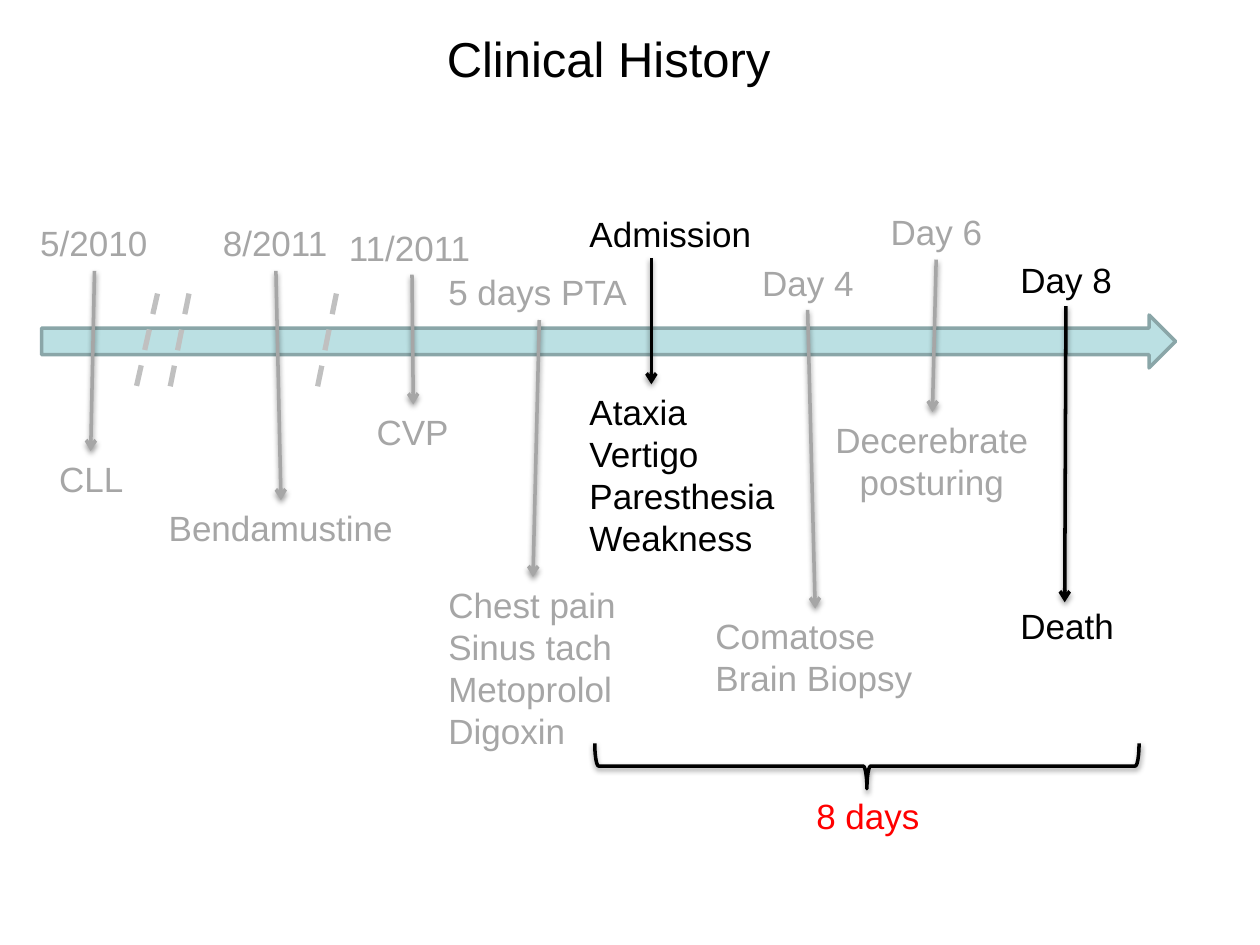
from lxml.etree import SubElement
from pptx import Presentation
from pptx.dml.color import RGBColor
from pptx.enum.dml import MSO_LINE
from pptx.enum.shapes import MSO_CONNECTOR, MSO_SHAPE
from pptx.enum.text import MSO_ANCHOR, MSO_AUTO_SIZE, PP_ALIGN
from pptx.oxml.ns import qn
from pptx.util import Emu, Pt

PX = 9144
FONT = "Arial"
BLACK = RGBColor(0x00, 0x00, 0x00)
GRAY = RGBColor(0xA6, 0xA6, 0xA6)
SILVER = RGBColor(0xC0, 0xC0, 0xC0)
RED = RGBColor(0xFF, 0x00, 0x00)
AQUA = RGBColor(0xBB, 0xE0, 0xE3)
TEAL = RGBColor(0x8A, 0xA6, 0xA8)

LINE_HEIGHT = 33
BOX_PADDING = 10

STAGES = [
    ("5/2010", (22, 171, 105), (75, 215, 72, 358),
     ["CLL"], (37, 358, 71), GRAY),
    ("5 days PTA", (346, 210, 164), (428, 254, 423, 458),
     ["Chest pain", "Sinus tach", "Metoprolol", "Digoxin"], (346, 458, 153), GRAY),
    ("Admission", (458, 164, 151), (517, 205, 517, 305),
     ["Ataxia", "Vertigo", "Paresthesia", "Weakness"], (458, 305, 168), BLACK),
    ("8/2011", (167, 171, 105), (219, 215, 223, 397),
     ["Bendamustine"], (124, 397, 198), GRAY),
    ("11/2011", (267, 175, 120), (327, 218, 328, 321),
     ["CVP"], (289, 321, 77), GRAY),
    ("Day 4", (595, 203, 93), (641, 246, 647, 483),
     ["Comatose", "Brain Biopsy"], (558, 483, 177), GRAY),
    ("Day 6", (697, 162, 93), (743, 206, 740, 327),
     ["Decerebrate", "posturing"], (649, 327, 181), GRAY),
    ("Day 8", (800, 200, 93), (846, 243, 845, 478),
     ["Death"], (800, 475, 94), BLACK),
]
CENTERED_STAGE = "Day 6"

BREAK_MARKS = [(125, 233, 108, 308), (150, 233, 133, 317), (267, 233, 250, 317)]


def px(*lengths):
    return [Emu(length * PX) for length in lengths]


def add_text(slide, lines, left, top, width, height=None, size=20, color=BLACK,
             align=PP_ALIGN.LEFT, anchor=MSO_ANCHOR.TOP):
    fitted = height is None
    if fitted:
        height = LINE_HEIGHT * len(lines) + BOX_PADDING
    box = slide.shapes.add_textbox(*px(left, top, width, height))
    frame = box.text_frame
    frame.word_wrap = not fitted
    frame.auto_size = MSO_AUTO_SIZE.SHAPE_TO_FIT_TEXT if fitted else MSO_AUTO_SIZE.NONE
    frame.vertical_anchor = anchor
    for index, line in enumerate(lines):
        para = frame.paragraphs[0] if index == 0 else frame.add_paragraph()
        para.alignment = align
        span = para.add_run()
        span.text = line
        span.font.name = FONT
        span.font.size = Pt(size)
        span.font.color.rgb = color


def set_line(shape, color, weight):
    shape.line.color.rgb = color
    shape.line.width = Pt(weight)


def set_shadow(shape, visible):
    effects = SubElement(shape._element.spPr, qn("a:effectLst"))
    if visible:
        shadow = SubElement(effects, qn("a:outerShdw"), blurRad=str(Pt(3.1)),
                            dist=str(Pt(1.6)), dir="5400000", rotWithShape="0")
        color = SubElement(shadow, qn("a:srgbClr"), val=str(BLACK))
        SubElement(color, qn("a:alpha"), val="38000")


def add_line(slide, ends, color, weight):
    line = slide.shapes.add_connector(MSO_CONNECTOR.STRAIGHT, *px(*ends))
    set_line(line, color, weight)
    return line


def add_arrow(slide, ends, color):
    arrow = add_line(slide, ends, color, 2)
    SubElement(arrow.line._get_or_add_ln(), qn("a:tailEnd"), type="arrow")
    set_shadow(arrow, True)


def add_break_mark(slide, ends):
    mark = add_line(slide, ends, SILVER, 3)
    mark.line.dash_style = MSO_LINE.DASH
    set_shadow(mark, False)


def add_timeline(slide):
    timeline = slide.shapes.add_shape(MSO_SHAPE.RIGHT_ARROW, *px(33, 250, 900, 42))
    timeline.fill.solid()
    timeline.fill.fore_color.rgb = AQUA
    set_line(timeline, TEAL, 2)
    set_shadow(timeline, False)


def add_brace(slide):
    brace = slide.shapes.add_shape(MSO_SHAPE.RIGHT_BRACE, *px(670, 392, 36, 432))
    brace.rotation = 90
    brace.fill.background()
    set_line(brace, BLACK, 2)
    set_shadow(brace, True)


def add_stage(slide, label, label_place, arrow_ends, outcome, outcome_place, color):
    align = PP_ALIGN.CENTER if label == CENTERED_STAGE else PP_ALIGN.LEFT
    add_text(slide, [label], *label_place, color=color)
    add_arrow(slide, arrow_ends, color)
    add_text(slide, outcome, *outcome_place, color=color, align=align)


def main():
    deck = Presentation()
    deck.slide_width, deck.slide_height = px(1000, 750)
    page = deck.slides.add_slide(deck.slide_layouts[6])
    add_text(page, ["Clinical History"], 283, 17, 400, 58, size=28,
             align=PP_ALIGN.CENTER, anchor=MSO_ANCHOR.MIDDLE)
    add_timeline(page)
    for stage in STAGES:
        add_stage(page, *stage)
    add_brace(page)
    add_text(page, ["8 days"], 638, 626, 102, color=RED)
    for ends in BREAK_MARKS:
        add_break_mark(page, ends)
    deck.save("out.pptx")


if __name__ == "__main__":
    main()
